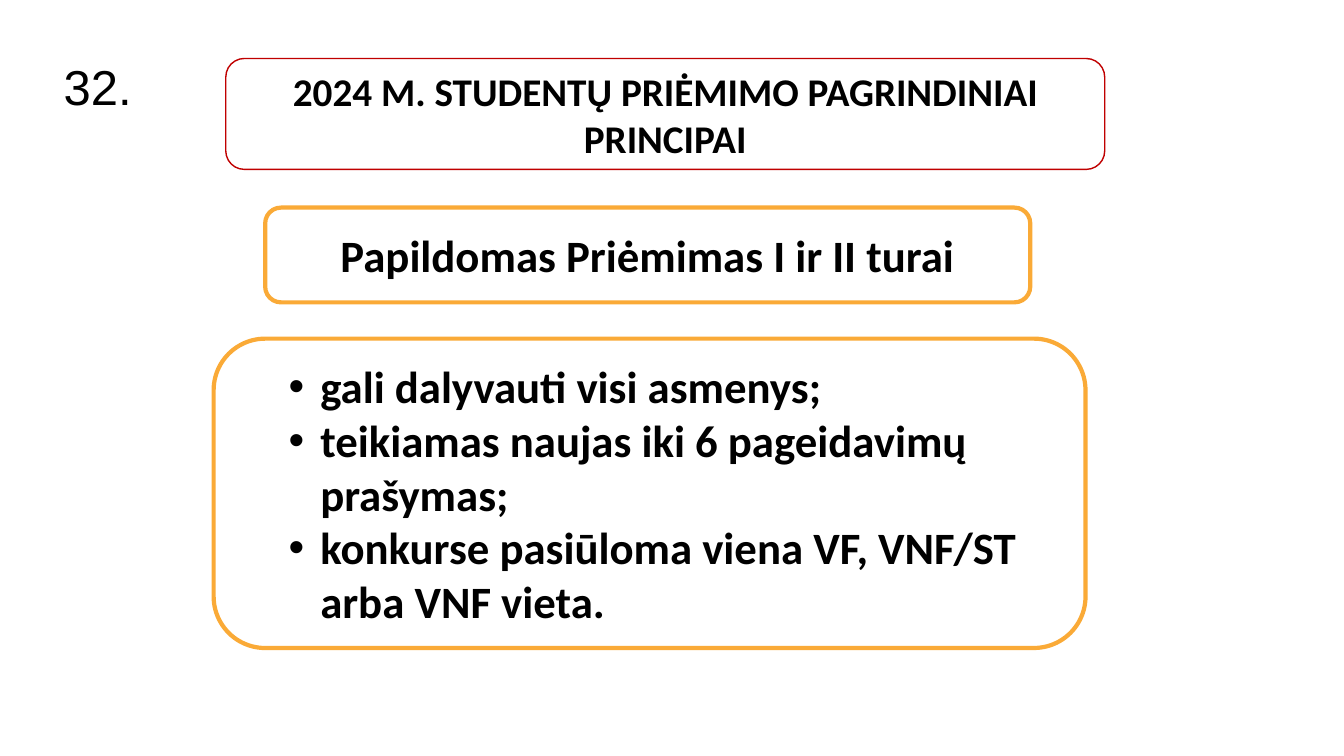
from dataclasses import dataclass

import pptx
import pptx.dml.color
import pptx.enum.shapes
import pptx.enum.text
import pptx.util
from lxml import etree
from pptx.oxml import ns

Pt = pptx.util.Pt
Shape = pptx.enum.shapes.MSO_SHAPE
Align = pptx.enum.text.PP_ALIGN
Anchor = pptx.enum.text.MSO_ANCHOR

BLACK = pptx.dml.color.RGBColor(0x00, 0x00, 0x00)
RED = pptx.dml.color.RGBColor(0xC0, 0x00, 0x00)
ORANGE = pptx.dml.color.RGBColor(0xFA, 0xAA, 0x37)


@dataclass
class Box:
    left: float
    top: float
    width: float
    height: float


@dataclass
class Frame:
    box: Box
    kind: Shape
    color: pptx.dml.color.RGBColor
    weight: float
    lines: tuple[str, ...] = ()
    bulleted: bool = False


NUMBER_BOX = Box(38.2, 33.1, 69.1, 44.6)
TITLE_BOX = Box(161.3, 41.8, 627.8, 79.2)
FRAMES = [
    Frame(TITLE_BOX, Shape.ROUNDED_RECTANGLE, RED, 1),
    Frame(Box(189.4, 148.3, 546.5, 67.7), Shape.FLOWCHART_ALTERNATE_PROCESS, ORANGE, 3,
          ("Papildomas Priėmimas I ir II turai",)),
    Frame(Box(152.6, 241.9, 622.8, 221), Shape.FLOWCHART_ALTERNATE_PROCESS, ORANGE, 3,
          ("gali dalyvauti visi asmenys;",
           "teikiamas naujas iki 6 pageidavimų prašymas;",
           "konkurse pasiūloma viena VF, VNF/ST arba VNF vieta."),
          bulleted=True),
]


def add_bullet(p) -> None:
    p.level = 1
    pPr = p._p.get_or_add_pPr()
    pPr.set("marL", str(Pt(58.3)))
    pPr.set("indent", str(-Pt(22.5)))
    etree.SubElement(pPr, ns.qn("a:buFont")).set("typeface", "Arial")
    etree.SubElement(pPr, ns.qn("a:buChar")).set("char", "•")


def format_text(p, size: float, name: str, bold: bool, align: Align) -> None:
    p.alignment = align
    p.space_before = Pt(0)
    for r in p.runs:
        r.font.size = Pt(size)
        r.font.name = name
        r.font.bold = bold
        r.font.color.rgb = BLACK


def fill_placeholder(sp, box: Box, text: str, anchor: Anchor):
    """Move a placeholder to box, set its text and return the paragraph."""
    sp.left, sp.top = Pt(box.left), Pt(box.top)
    sp.width, sp.height = Pt(box.width), Pt(box.height)
    tf = sp.text_frame
    tf.text = text
    tf.word_wrap = True
    tf.auto_size = pptx.enum.text.MSO_AUTO_SIZE.NONE
    tf.vertical_anchor = anchor
    return tf.paragraphs[0]


def add_frame(s, frame: Frame) -> None:
    box = frame.box
    sp = s.shapes.add_shape(frame.kind, Pt(box.left), Pt(box.top),
                            Pt(box.width), Pt(box.height))
    sp.shadow.inherit = False
    sp.fill.background()
    sp.line.color.rgb = frame.color
    sp.line.width = Pt(frame.weight)
    tf = sp.text_frame
    tf.word_wrap = True
    tf.vertical_anchor = Anchor.MIDDLE
    for i, line in enumerate(frame.lines):
        p = tf.add_paragraph() if i else tf.paragraphs[0]
        p.text = line
        if frame.bulleted:
            add_bullet(p)
        format_text(p, 32, "Calibri", True, Align.LEFT if frame.bulleted else Align.CENTER)


def main() -> None:
    prs = pptx.Presentation()
    prs.slide_width, prs.slide_height = Pt(960), Pt(540)
    s = prs.slides.add_slide(prs.slide_layouts.get_by_name("Section Header"))

    number = s.placeholders[1]
    p = fill_placeholder(number, NUMBER_BOX, "32.", Anchor.TOP)
    number.text_frame.margin_top = Pt(7)
    format_text(p, 35, "Arial", False, Align.LEFT)

    p = fill_placeholder(s.shapes.title, TITLE_BOX,
                         "2024 M. STUDENTŲ PRIĖMIMO PAGRINDINIAI PRINCIPAI", Anchor.MIDDLE)
    format_text(p, 28, "Calibri", True, Align.CENTER)

    for frame in FRAMES:
        add_frame(s, frame)
    prs.save("out.pptx")


if __name__ == "__main__":
    main()
